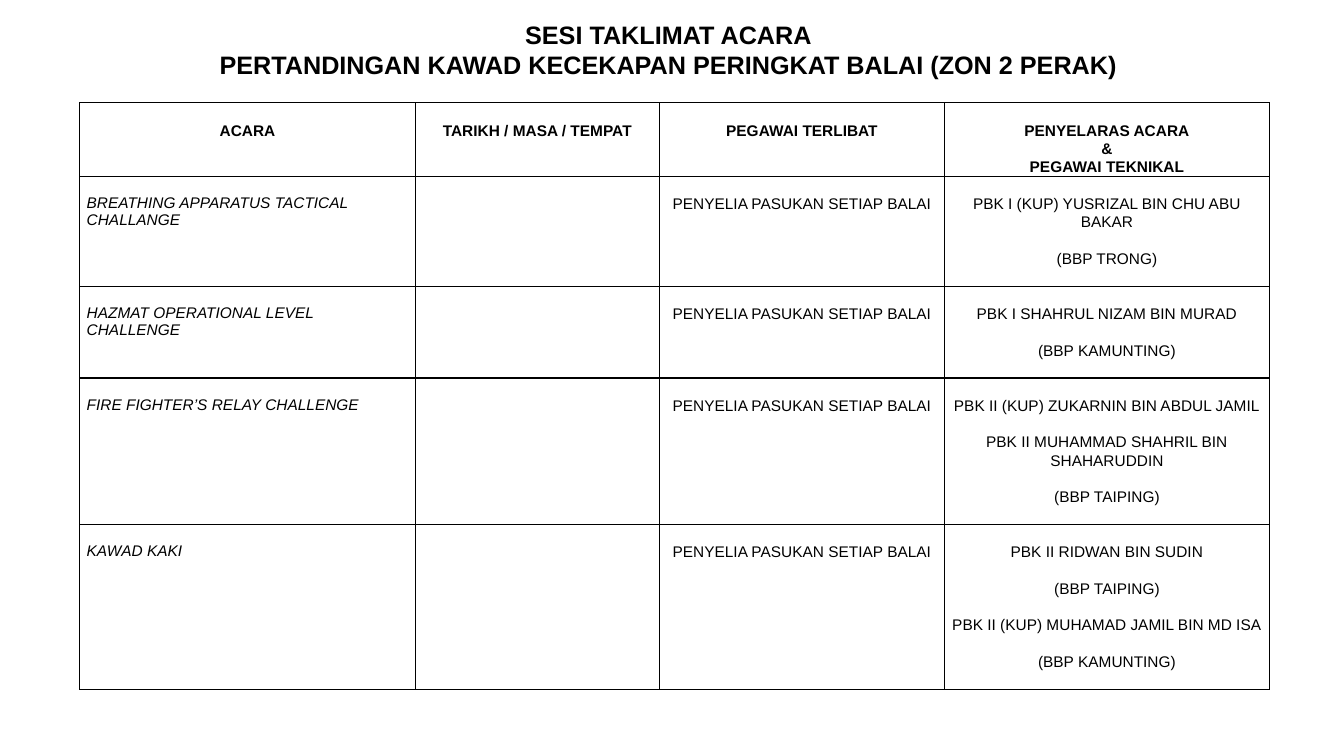
"""Build the event briefing slide with its schedule table."""
import pptx
import pptx.util
import pptx.enum.text
import pptx.dml.color
import pptx.oxml.ns
import lxml.etree

Inches, Pt = pptx.util.Inches, pptx.util.Pt
ALIGN = pptx.enum.text.PP_ALIGN

THEME = {
    "font": "Arial",
    "ink": "000000",
    "title": Pt(18),
    "body": Pt(11),
    "gap": Pt(13.1),
    "rule": Pt(1),
}
INK = pptx.dml.color.RGBColor.from_string(THEME["ink"])

HEADS = [
    ["ACARA"],
    ["TARIKH / MASA / TEMPAT"],
    ["PEGAWAI TERLIBAT"],
    ["PENYELARAS ACARA", "&", "PEGAWAI TEKNIKAL"],
]
CREW = "PENYELIA PASUKAN SETIAP BALAI"
EVENTS = [
    ("BREATHING APPARATUS TACTICAL CHALLANGE",
     ["PBK I (KUP) YUSRIZAL BIN CHU ABU BAKAR", "(BBP TRONG)"]),
    ("HAZMAT OPERATIONAL LEVEL CHALLENGE",
     ["PBK I SHAHRUL NIZAM BIN MURAD", "(BBP KAMUNTING)"]),
    ("FIRE FIGHTER’S RELAY CHALLENGE",
     ["PBK II (KUP) ZUKARNIN BIN ABDUL JAMIL",
      "PBK II MUHAMMAD SHAHRIL BIN SHAHARUDDIN", "(BBP TAIPING)"]),
    ("KAWAD KAKI",
     ["PBK II RIDWAN BIN SUDIN", "(BBP TAIPING)",
      "PBK II (KUP) MUHAMAD JAMIL BIN MD ISA", "(BBP KAMUNTING)"]),
]
WIDTHS = [3.33, 2.42, 2.83, 3.22]
HEIGHTS = [0.73, 1.09, 0.91, 1.45, 1.64]


def write(frame, lines, size, align, lead=1.0, gap=0, bold=False, italic=False):
    """Fill a text frame with one paragraph per line."""
    for i, line in enumerate(lines):
        para = frame.paragraphs[0] if i == 0 else frame.add_paragraph()
        look = {"alignment": align, "line_spacing": lead,
                "space_before": gap if i else 0}
        for key, value in look.items():
            setattr(para, key, value)
        run = para.add_run()
        run.text = line
        style = {"name": THEME["font"], "size": size, "bold": bold, "italic": italic}
        for key, value in style.items():
            setattr(run.font, key, value)
        run.font.color.rgb = INK


def frame_cell(cell):
    """Draw the four borders of a cell and clear its fill."""
    props = cell._tc.get_or_add_tcPr()
    qn = pptx.oxml.ns.qn
    for side in ("a:lnL", "a:lnR", "a:lnT", "a:lnB"):
        line = lxml.etree.SubElement(props, qn(side), w=str(THEME["rule"]))
        fill = lxml.etree.SubElement(line, qn("a:solidFill"))
        lxml.etree.SubElement(fill, qn("a:srgbClr"), val=THEME["ink"])
    cell.fill.background()


deck = pptx.Presentation()
deck.slide_width, deck.slide_height = Inches(13.33), Inches(7.5)
slide = deck.slides.add_slide(deck.slide_layouts[6])

grid = slide.shapes.add_table(
    len(HEIGHTS), len(WIDTHS), Inches(0.79), Inches(1.02),
    Inches(sum(WIDTHS)), Inches(sum(HEIGHTS))).table
for key, value in {"first_row": False, "horz_banding": False}.items():
    setattr(grid, key, value)
for col, width in zip(grid.columns, WIDTHS):
    col.width = Inches(width)
for row, height in zip(grid.rows, HEIGHTS):
    row.height = Inches(height)

inset = {"margin_left": Inches(0.07), "margin_right": Inches(0.07),
         "margin_top": Inches(0.18), "margin_bottom": 0}
for cell in grid.iter_cells():
    for key, value in inset.items():
        setattr(cell, key, value)
    frame_cell(cell)

for c, head in enumerate(HEADS):
    write(grid.cell(0, c).text_frame, head, THEME["body"], ALIGN.CENTER, 1.07, bold=True)
for r, (event, leads) in enumerate(EVENTS, 1):
    write(grid.cell(r, 0).text_frame, [event], THEME["body"], ALIGN.LEFT, italic=True)
    for c, lines in ((2, [CREW]), (3, leads)):
        write(grid.cell(r, c).text_frame, lines, THEME["body"], ALIGN.CENTER,
              1.07, THEME["gap"])

title = slide.shapes.add_textbox(
    Inches(0.7), Inches(0.14), Inches(11.86), Inches(0.71)).text_frame
title.word_wrap = True
write(title, ["SESI TAKLIMAT ACARA",
              "PERTANDINGAN KAWAD KECEKAPAN PERINGKAT BALAI (ZON 2 PERAK)"],
      THEME["title"], ALIGN.CENTER, bold=True)

deck.save("out.pptx")
